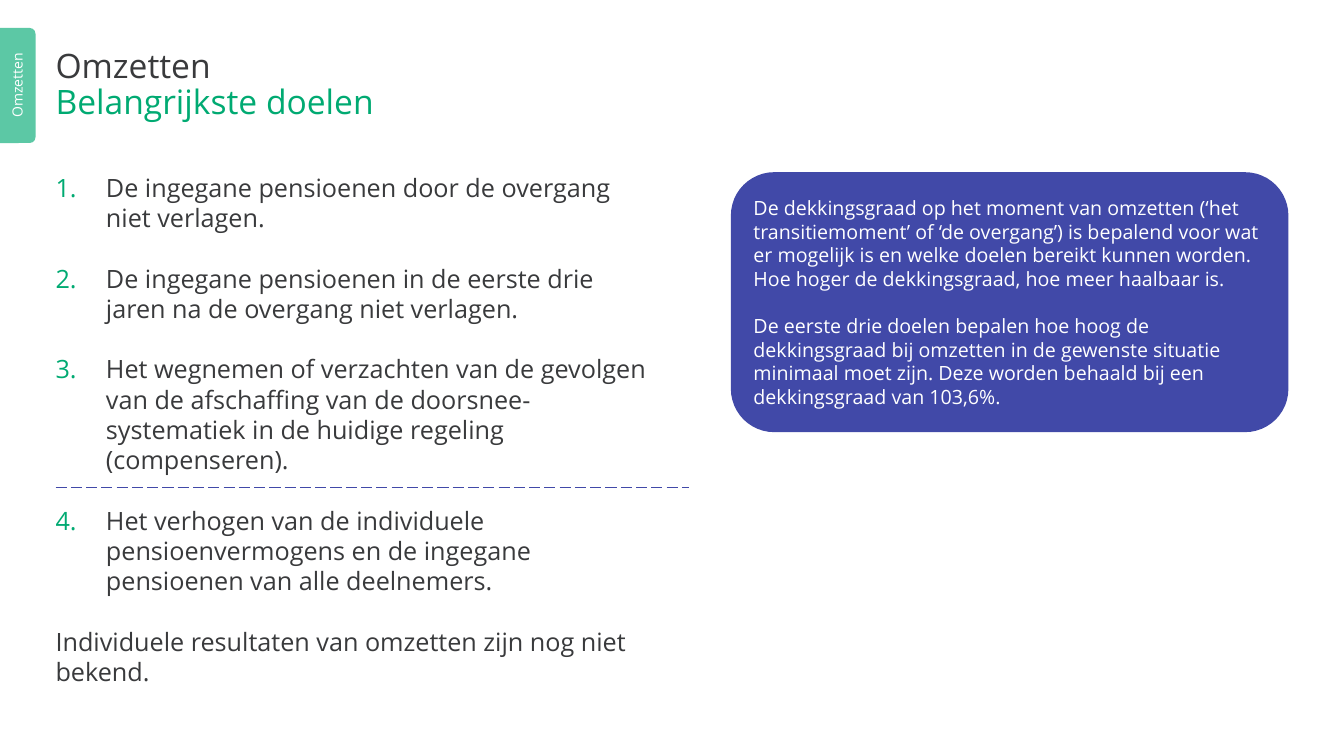
from pptx import Presentation
from pptx import util as u
from pptx.dml.color import RGBColor
from pptx.enum import dml, shapes, text
from pptx.oxml import parse_xml
from pptx.oxml.ns import nsdecls

INK, GREEN, MINT, INDIGO, WHITE = "393A3C", "00AA72", "5CC8A5", "4149A8", "FFFFFF"


def paint(color_format, color):
    color_format.rgb = RGBColor.from_string(color)


def write(paragraph, words, size=18, color=INK, align=text.PP_ALIGN.LEFT, after=0, spacing=1.0):
    paragraph.alignment = align
    paragraph.line_spacing = spacing
    paragraph.space_before = u.Pt(0)
    paragraph.space_after = u.Pt(after)
    run = paragraph.add_run()
    run.text = words
    run.font.name = "Open Sans"
    run.font.size = u.Pt(size)
    paint(run.font.color, color)


deck = Presentation()
deck.slide_width, deck.slide_height = u.Cm(33.87), u.Cm(19.05)
slide = deck.slides.add_slide(deck.slide_layouts[1])
heading, goals = slide.placeholders

# Title and list placeholders
for holder, top, width, height, anchor in (
    (heading, 0.71, 31.06, 2.9, text.MSO_ANCHOR.MIDDLE),
    (goals, 4.34, 15.09, 12.27, text.MSO_ANCHOR.TOP),
):
    holder.left, holder.top = u.Cm(1.4), u.Cm(top)
    holder.width, holder.height = u.Cm(width), u.Cm(height)
    frame = holder.text_frame
    frame.margin_left = frame.margin_right = frame.margin_top = frame.margin_bottom = 0
    frame.vertical_anchor = anchor
    frame.word_wrap = True
    frame.auto_size = text.MSO_AUTO_SIZE.NONE

# Title in two colours
title_line = heading.text_frame.paragraphs[0]
write(title_line, "Omzetten", size=24, spacing=0.9)
title_line.add_line_break()
write(title_line, "Belangrijkste doelen", size=24, color=GREEN, spacing=0.9)

# Numbered goals
goal_texts = (
    "De ingegane pensioenen door de overgang niet verlagen.",
    "De ingegane pensioenen in de eerste drie jaren na de overgang niet verlagen.",
    "Het wegnemen of verzachten van de gevolgen van de afschaffing van de "
    "doorsnee-systematiek in de huidige regeling (compenseren).",
    "Het verhogen van de individuele pensioenvermogens en de ingegane pensioenen "
    "van alle deelnemers.",
)
goal = goals.text_frame.paragraphs[0]
for goal_text in goal_texts:
    write(goal, goal_text, after=21.6)
    props = goal._p.get_or_add_pPr()
    props.set("marL", str(u.Cm(1.27)))
    props.set("indent", str(-u.Cm(1.27)))
    for bullet in (
        f'<a:buClr {nsdecls("a")}><a:srgbClr val="{GREEN}"/></a:buClr>',
        f'<a:buFont {nsdecls("a")} typeface="Open Sans"/>',
        f'<a:buAutoNum {nsdecls("a")} type="arabicPeriod"/>',
    ):
        props.append(parse_xml(bullet))
    goal = goals.text_frame.add_paragraph()

# Closing remark without number
write(goal, "Individuele resultaten van omzetten zijn nog niet bekend.")
props = goal._p.get_or_add_pPr()
props.set("marL", "0")
props.set("indent", "0")
props.append(parse_xml(f'<a:buNone {nsdecls("a")}/>'))

# Explanation panel and side tab
panel = slide.shapes.add_shape(
    shapes.MSO_SHAPE.ROUNDED_RECTANGLE, u.Cm(18.42), u.Cm(4.34), u.Cm(14.05), u.Cm(6.55))
tab_box = u.Cm(-1), u.Cm(1.71), u.Cm(2.9), u.Cm(0.89)
tab = slide.shapes.add_shape(shapes.MSO_SHAPE.ROUND_2_SAME_RECTANGLE, *tab_box)
tab.rotation = 90
for block, color in ((panel, INDIGO), (tab, MINT)):
    block.shadow.inherit = False
    block.fill.solid()
    paint(block.fill.fore_color, color)
    block.line.fill.background()

panel.text_frame.word_wrap = True
panel.text_frame.vertical_anchor = text.MSO_ANCHOR.MIDDLE
write(panel.text_frame.paragraphs[0],
      "De dekkingsgraad op het moment van omzetten (‘het transitiemoment’ of "
      "‘de overgang’) is bepalend voor wat er mogelijk is en welke doelen bereikt "
      "kunnen worden. Hoe hoger de dekkingsgraad, hoe meer haalbaar is.",
      size=14, color=WHITE, after=16.8)
write(panel.text_frame.add_paragraph(),
      "De eerste drie doelen bepalen hoe hoog de dekkingsgraad bij omzetten in de "
      "gewenste situatie minimaal moet zijn. Deze worden behaald bij een "
      "dekkingsgraad van 103,6%.",
      size=14, color=WHITE)

# Upright label on the tab
tab_label = slide.shapes.add_textbox(*tab_box)
tab_label.rotation = 270
frame = tab_label.text_frame
frame.word_wrap = True
frame.margin_left = frame.margin_right = u.Cm(0.5)
frame.margin_top = frame.margin_bottom = u.Cm(0.23)
write(frame.paragraphs[0], "Omzetten", size=10, color=WHITE, align=text.PP_ALIGN.CENTER)

# Dashed divider above the fourth goal
divider = slide.shapes.add_connector(
    shapes.MSO_CONNECTOR.STRAIGHT, u.Cm(1.4), u.Cm(12.29), u.Cm(17.37), u.Cm(12.29))
paint(divider.line.color, INDIGO)
divider.line.width = u.Pt(1)
divider.line.dash_style = dml.MSO_LINE.LONG_DASH
divider._element.spPr.append(parse_xml(f'<a:effectLst {nsdecls("a")}/>'))

deck.save("out.pptx")
